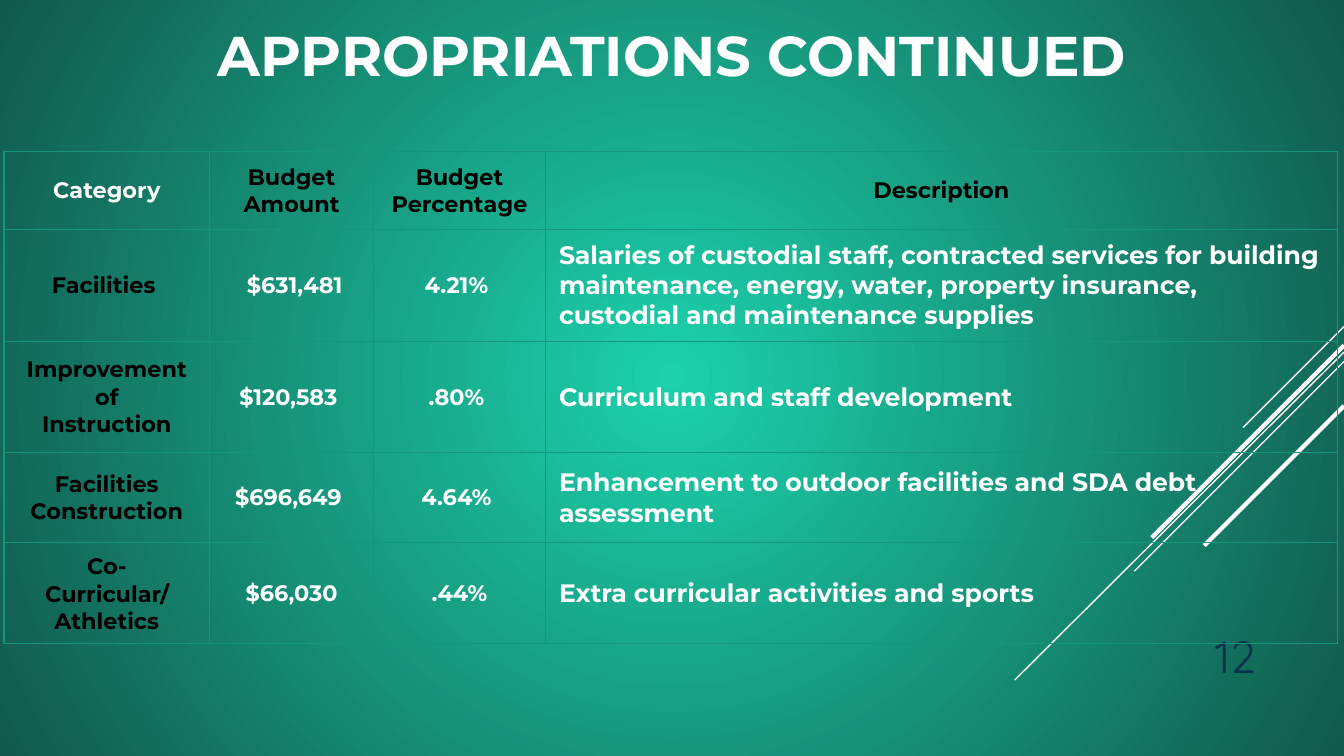
"""Build the continued appropriations slide with its budget table."""
import dataclasses

import lxml.etree
import pptx
import pptx.dml.color
import pptx.enum.shapes
import pptx.enum.text
import pptx.oxml
import pptx.oxml.ns
import pptx.util

Inches = pptx.util.Inches
ALIGN = pptx.enum.text.PP_ALIGN
ANCHOR = pptx.enum.text.MSO_ANCHOR
COLORS = {
    "white": "FFFFFF",
    "black": "000000",
    "navy": "09304A",
    "border": "14967C",
    "glow": "1CD1AC",
    "edge": "11594B",
}
SLIDE_WIDTH = 10
HEADINGS = ("Category", "Budget Amount", "Budget Percentage", "Description")
COLUMN_WIDTHS = (1.53, 1.22, 1.28, 5.89)
ROW_HEIGHTS = (0.58, 0.83, 0.83, 0.67, 0.67)


@dataclasses.dataclass(frozen=True)
class Ray:
    """A diagonal line rising to the right edge of the slide."""
    top: float
    left: float
    bottom: float
    weight: float = 0.75


@dataclasses.dataclass(frozen=True)
class Appropriation:
    """One budget line of the table."""
    category: str
    amount: str
    percentage: str
    description: str


@dataclasses.dataclass(frozen=True)
class Style:
    """Look of a piece of text."""
    size: float
    color: str = "white"
    name: str = "Montserrat"
    bold: bool = True
    align: ALIGN = ALIGN.CENTER


RAYS = (
    Ray(2.43, 9.25, 3.18),
    Ray(2.62, 7.55, 5.06),
    Ray(2.69, 8.44, 4.25),
    Ray(2.57, 8.57, 4, 2.25),
    Ray(3.02, 8.96, 4.06, 2.25),
)
APPROPRIATIONS = (
    Appropriation("Facilities ", " $631,481", "4.21% ",
                  "Salaries of custodial staff, contracted services for building maintenance, "
                  "energy, water, property insurance, custodial and maintenance supplies"),
    Appropriation("Improvement of\nInstruction", "$120,583 ", ".80% ",
                  "Curriculum and staff development"),
    Appropriation("Facilities Construction", "$696,649 ", "4.64% ",
                  "Enhancement to outdoor facilities and SDA debt assessment"),
    Appropriation("Co-Curricular/Athletics", "$66,030", ".44%",
                  "Extra curricular activities and sports"),
)
LABEL = Style(12, "black")
FIGURE = Style(12)
DETAIL = Style(13.5, align=ALIGN.LEFT)


def rgb(name: str) -> pptx.dml.color.RGBColor:
    """Look up a named colour."""
    return pptx.dml.color.RGBColor.from_string(COLORS[name])


def write(frame, text: str, style: Style) -> None:
    """Fill a text frame with styled paragraphs."""
    frame.text = text
    for para in frame.paragraphs:
        para.alignment = style.align
        for span in para.runs:
            for key in ("size", "name", "bold"):
                value = getattr(style, key)
                setattr(span.font, key, pptx.util.Pt(value) if key == "size" else value)
            span.font.color.rgb = rgb(style.color)


def paint_background(page) -> None:
    """Give the page a radial gradient."""
    fill = page.background.fill
    fill.gradient()
    for stop, name in zip(fill.gradient_stops, ("glow", "edge")):
        stop.color.rgb = rgb(name)
    linear = page.element.xpath("./p:cSld/p:bg//a:lin")[0]
    radial = pptx.oxml.parse_xml(
        f'<a:path {pptx.oxml.ns.nsdecls("a")} path="circle">'
        '<a:fillToRect l="50000" t="50000" r="50000" b="50000"/></a:path>')
    linear.getparent().replace(linear, radial)


def draw_ray(page, ray: Ray) -> None:
    """Draw one white diagonal line."""
    line = page.shapes.add_connector(
        pptx.enum.shapes.MSO_CONNECTOR.STRAIGHT,
        Inches(SLIDE_WIDTH), Inches(ray.top), Inches(ray.left), Inches(ray.bottom))
    line.line.color.rgb = rgb("white")
    line.line.width = pptx.util.Pt(ray.weight)
    properties = line.element.find(pptx.oxml.ns.qn("p:spPr"))
    lxml.etree.SubElement(properties, pptx.oxml.ns.qn("a:effectLst"))


def draw_cell(cell, text: str, style: Style) -> None:
    """Write, border and clear the fill of one table cell."""
    layout = {
        "vertical_anchor": ANCHOR.MIDDLE,
        "margin_left": Inches(0.1),
        "margin_right": Inches(0.1),
        "margin_top": pptx.util.Pt(5.4),
        "margin_bottom": pptx.util.Pt(5.4),
    }
    for key, value in layout.items():
        setattr(cell, key, value)
    write(cell.text_frame, text, style)
    properties = cell._tc.get_or_add_tcPr()
    for side in "LRTB":
        properties.append(pptx.oxml.parse_xml(
            f'<a:ln{side} {pptx.oxml.ns.nsdecls("a")} w="{pptx.util.Pt(0.75)}"><a:solidFill>'
            f'<a:srgbClr val="{COLORS["border"]}"/></a:solidFill></a:ln{side}>'))
    cell.fill.background()


def draw_table(page) -> None:
    """Draw the budget table."""
    table = page.shapes.add_table(
        len(ROW_HEIGHTS), len(COLUMN_WIDTHS), Inches(0.03), Inches(1.13),
        Inches(sum(COLUMN_WIDTHS)), Inches(sum(ROW_HEIGHTS))).table
    table.first_row = table.horz_banding = False
    for column, width in zip(table.columns, COLUMN_WIDTHS):
        column.width = Inches(width)
    for row, height in zip(table.rows, ROW_HEIGHTS):
        row.height = Inches(height)
    contents = [(HEADINGS, (FIGURE, LABEL, LABEL, LABEL))]
    for item in APPROPRIATIONS:
        contents.append((dataclasses.astuple(item), (LABEL, FIGURE, FIGURE, DETAIL)))
    for row, (texts, styles) in zip(table.rows, contents):
        for cell, text, style in zip(row.cells, texts, styles):
            draw_cell(cell, text, style)


def draw_text(box, bounds: tuple, text: str, style: Style, **layout) -> None:
    """Place a box and write its text."""
    for key, value in zip(("left", "top", "width", "height"), bounds):
        setattr(box, key, Inches(value))
    frame = box.text_frame
    for key, value in {"word_wrap": True, **layout}.items():
        setattr(frame, key, value)
    write(frame, text, style)


def main() -> None:
    """Build and save the deck."""
    deck = pptx.Presentation()
    deck.slide_width = Inches(SLIDE_WIDTH)
    deck.slide_height = Inches(SLIDE_WIDTH * 9 / 16)
    page = deck.slides.add_slide(deck.slide_layouts[5])
    paint_background(page)
    for ray in RAYS:
        draw_ray(page, ray)
    number = page.shapes.add_textbox(0, 0, 0, 0)
    draw_text(number, (8.5, 4.58, 0.94, 0.55), "12",
              Style(24, "navy", "Quicksand", False, ALIGN.RIGHT),
              vertical_anchor=ANCHOR.BOTTOM)
    draw_table(page)
    margins = dict.fromkeys(("margin_left", "margin_top", "margin_right", "margin_bottom"), 0)
    draw_text(page.shapes.title, (1.3, 0.15, 7.4, 0.52), "APPROPRIATIONS CONTINUED",
              Style(30), vertical_anchor=ANCHOR.TOP,
              auto_size=pptx.enum.text.MSO_AUTO_SIZE.NONE, **margins)
    deck.save("out.pptx")


if __name__ == "__main__":
    main()
